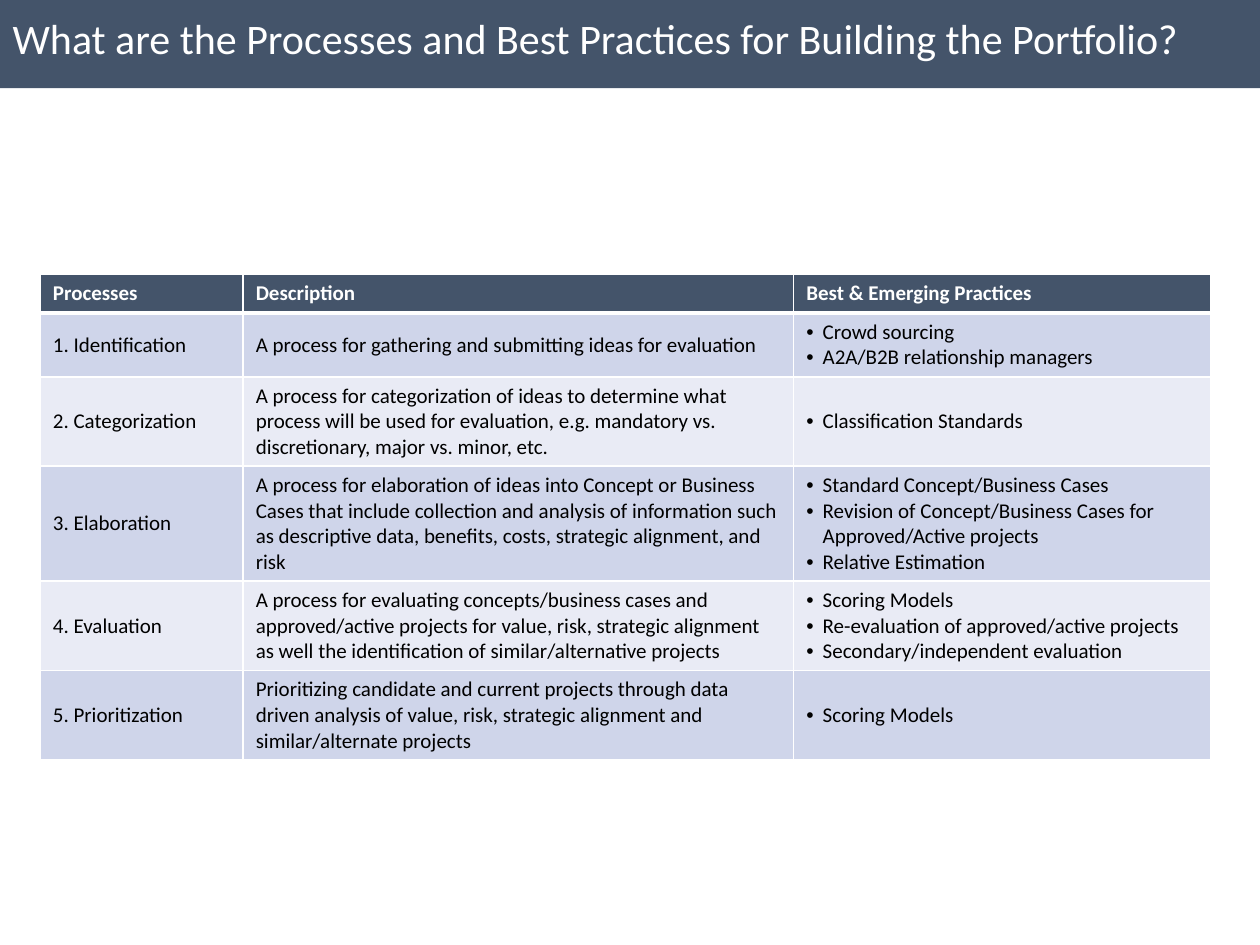
from lxml import etree
from pptx import Presentation
from pptx import util as u
from pptx.dml import color
from pptx.enum import text
from pptx.oxml import ns

COLORS = {
    "slate": "44546A",
    "white": "FFFFFF",
    "black": "000000",
    "odd": "CFD5EA",
    "even": "E9EBF5",
}
TITLE = "What are the Processes and Best Practices for Building the Portfolio?"
HEADINGS = ["Processes", "Description", "Best & Emerging Practices"]
PROCESSES = [
    ("1. Identification",
     "A process for gathering and submitting ideas for evaluation",
     ["Crowd sourcing", "A2A/B2B relationship managers"]),
    ("2. Categorization",
     "A process for categorization of ideas to determine what process will be used "
     "for evaluation, e.g. mandatory vs. discretionary, major vs. minor, etc.",
     ["Classification Standards"]),
    ("3. Elaboration",
     "A process for elaboration of ideas into Concept or Business Cases that include "
     "collection and analysis of information such as descriptive data, benefits, costs, "
     "strategic alignment, and risk",
     ["Standard Concept/Business Cases",
      "Revision of Concept/Business Cases for Approved/Active projects",
      "Relative Estimation"]),
    ("4. Evaluation",
     "A process for evaluating concepts/business cases and approved/active projects for "
     "value, risk, strategic alignment as well the identification of similar/alternative "
     "projects",
     ["Scoring Models", "Re-evaluation of approved/active projects",
      "Secondary/independent evaluation"]),
    ("5. Prioritization",
     "Prioritizing candidate and current projects through data driven analysis of value, "
     "risk, strategic alignment and similar/alternate projects",
     ["Scoring Models"]),
]
COLUMN_WIDTHS = [1.61, 4.37, 3.31]
ROW_LINES = [1, 2, 3, 4, 3, 3]


def paint(target, name):
    target.fill.solid()
    target.fill.fore_color.rgb = color.RGBColor.from_string(COLORS[name])


def write(para, words, ink, **formats):
    span = para.add_run()
    span.text = words
    for key, value in {"name": "Calibri", **formats}.items():
        setattr(span.font, key, value)
    span.font.color.rgb = color.RGBColor.from_string(COLORS[ink])


def add_bullet(para):
    properties = para._p.get_or_add_pPr()
    properties.set("marL", str(u.Inches(0.13)))
    properties.set("indent", str(u.Inches(-0.13)))
    etree.SubElement(properties, ns.qn("a:buFont"), typeface="Arial")
    etree.SubElement(properties, ns.qn("a:buChar"), char="•")


def add_borders(cell, widths):
    properties = cell._tc.get_or_add_tcPr()
    for position, (side, points) in enumerate(widths.items()):
        line = etree.Element(ns.qn(f"a:ln{side}"), w=str(u.Pt(points)))
        fill = etree.SubElement(line, ns.qn("a:solidFill"))
        etree.SubElement(fill, ns.qn("a:srgbClr"), val=COLORS["white"])
        properties.insert(position, line)


def fill_cell(cell, content, row):
    header = row == 0
    paint(cell, "slate" if header else "odd" if row % 2 else "even")
    add_borders(cell, {"L": 1, "R": 1, "T": 3 if row == 1 else 1, "B": 3 if header else 1})
    cell.vertical_anchor = text.MSO_ANCHOR.MIDDLE
    bulleted = isinstance(content, list)
    for index, words in enumerate(content if bulleted else [content]):
        frame = cell.text_frame
        para = frame.add_paragraph() if index else frame.paragraphs[0]
        if bulleted:
            add_bullet(para)
        write(para, words, "white" if header else "black", size=u.Pt(12), bold=header)


def add_title(page, left, top, width, height):
    title = page.shapes.title
    places = {"left": left, "top": top, "width": width, "height": height}
    for key, value in places.items():
        setattr(title, key, u.Inches(value))
    paint(title, "slate")
    frame = title.text_frame
    formats = {"word_wrap": True, "auto_size": text.MSO_AUTO_SIZE.NONE,
               "vertical_anchor": text.MSO_ANCHOR.TOP}
    for side in ("left", "top", "right", "bottom"):
        formats[f"margin_{side}"] = u.Inches(0.1)
    for key, value in formats.items():
        setattr(frame, key, value)
    para = frame.paragraphs[0]
    para.alignment = text.PP_ALIGN.LEFT
    write(para, TITLE, "white", size=u.Pt(24))


def add_process_table(page, left, top, width, height):
    rows = [HEADINGS, *PROCESSES]
    table = page.shapes.add_table(
        len(rows), len(HEADINGS), *map(u.Inches, (left, top, width, height))).table
    for column, size in zip(table.columns, COLUMN_WIDTHS):
        column.width = u.Inches(size)
    for row, lines in zip(table.rows, ROW_LINES):
        row.height = u.Inches(0.1 + 0.2 * lines)
    for row, contents in enumerate(rows):
        for column, content in enumerate(contents):
            fill_cell(table.cell(row, column), content, row)


def main():
    deck = Presentation()
    deck.slide_width, deck.slide_height = u.Inches(10), u.Inches(7.5)
    page = deck.slides.add_slide(deck.slide_layouts[5])
    add_title(page, 0, 0, 10, 0.7)
    add_process_table(page, 0.32, 2.18, sum(COLUMN_WIDTHS), 3.8)
    deck.save("out.pptx")


if __name__ == "__main__":
    main()
